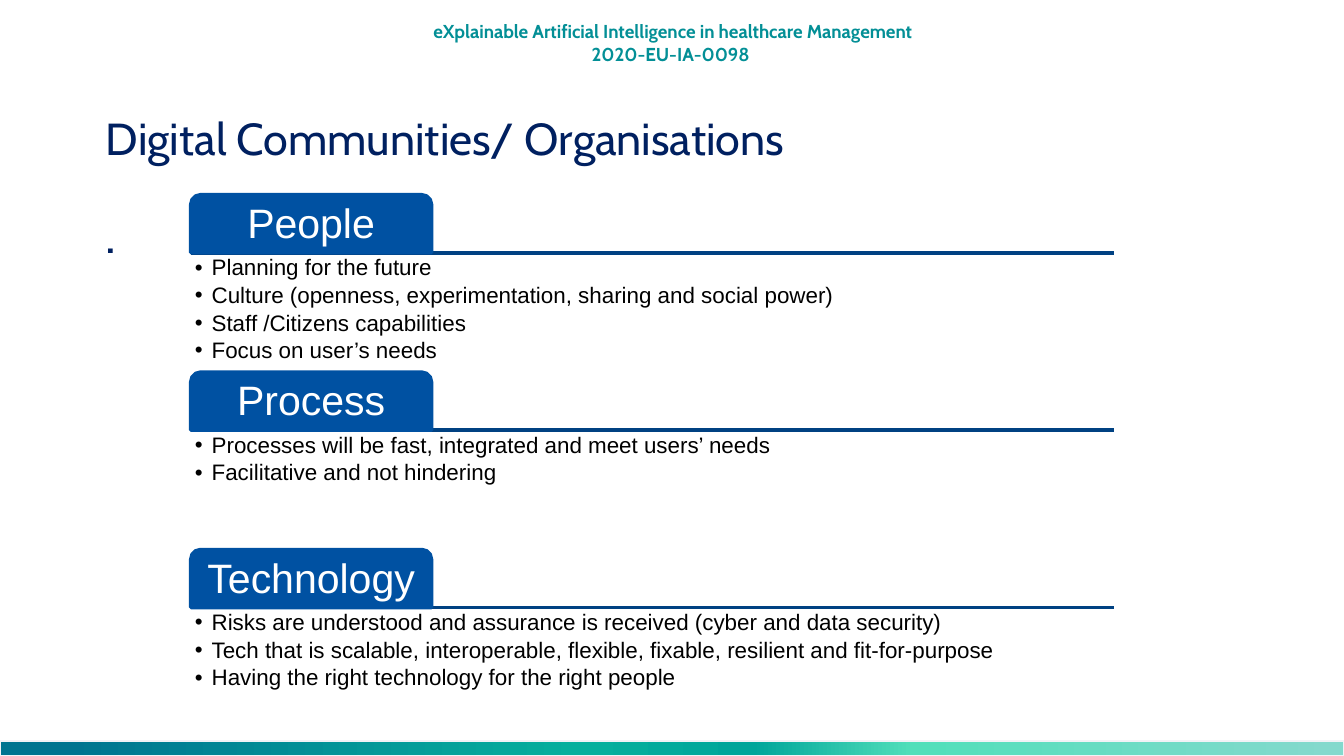
from lxml import etree
from pptx import Presentation
from pptx import util as u
from pptx.dml.color import RGBColor
from pptx.enum import shapes, text
from pptx.oxml import ns

COLORS = {"teal": "038F96", "navy": "002060", "blue": "0051A2", "rule": "004182",
          "white": "FFFFFF", "black": "000000", "edge": "F2F2F6"}
GRADIENT = [(0, "007490"), (5, "007490"), (43, "06AF9D"), (56, "00A59A"),
            (68, "51DFBA"), (99, "84D9CD"), (100, "84D9CD")]
COLS, ROWS = 100, 56.25
LEFT, TAB_W, TAB_H, RULE_W, LIST_H = 14.2, 17.9, 4.3, 68.7, 8.7
FIRST, PITCH = 14.5, 13.2
SECTIONS = {
    "People": ["Planning for the future",
               "Culture (openness, experimentation, sharing and social power)",
               "Staff /Citizens capabilities",
               "Focus on user’s needs"],
    "Process": ["Processes will be fast, integrated and meet users’ needs",
                "Facilitative and not hindering"],
    "Technology": ["Risks are understood and assurance is received (cyber and data security)",
                   "Tech that is scalable, interoperable, flexible, fixable, resilient and fit-for-purpose",
                   "Having the right technology for the right people"],
}


def rgb(name):
    """Return the palette colour of that name."""
    return RGBColor.from_string(COLORS[name])


def add_bullet(p, color):
    """Give a paragraph a hanging round bullet."""
    pPr = p._p.get_or_add_pPr()
    pPr.set("marL", str(u.Pt(9)))
    pPr.set("indent", str(u.Pt(-9)))
    clr = etree.SubElement(pPr, ns.qn("a:buClr"))
    etree.SubElement(clr, ns.qn("a:srgbClr"), val=COLORS[color])
    etree.SubElement(pPr, ns.qn("a:buFont"), typeface="Arial")
    etree.SubElement(pPr, ns.qn("a:buChar"), char="•")


def write(tf, lines, size=12, font="Arial", color="black", bold=False, align="LEFT",
          anchor="TOP", inset=(0.1, 0.05), spacing=0.9, after=0, bullet=False):
    """Fill a text frame with one formatted paragraph per line."""
    tf.word_wrap = True
    tf.vertical_anchor = text.MSO_ANCHOR[anchor]
    tf.margin_left = tf.margin_right = u.Inches(inset[0])
    tf.margin_top = tf.margin_bottom = u.Inches(inset[1])
    for i, line in enumerate(lines):
        p = tf.paragraphs[0] if i == 0 else tf.add_paragraph()
        if bullet:
            add_bullet(p, color)
        p.alignment = text.PP_ALIGN[align]
        if spacing:
            p.line_spacing = spacing
        p.space_after = u.Pt(after)
        r = p.add_run()
        r.text = line
        r.font.size, r.font.name, r.font.bold = u.Pt(size), font, bold
        r.font.color.rgb = rgb(color)


class Deck:
    """Hold the presentation style and the current slide."""

    def __init__(self, width=10):
        """Open a widescreen presentation with one blank slide."""
        self.prs = Presentation()
        self.prs.slide_width, self.prs.slide_height = u.Inches(width), u.Inches(width * 9 / 16)
        self.s = self.prs.slides.add_slide(self.prs.slide_layouts[6])

    def grid(self, *cells):
        """Turn alternating columns and rows into lengths."""
        units = self.prs.slide_width / COLS, self.prs.slide_height / ROWS
        return [round(n * units[i % 2]) for i, n in enumerate(cells)]

    def text(self, cells, lines, **style):
        """Add a text box."""
        sp = self.s.shapes.add_textbox(*self.grid(*cells))
        write(sp.text_frame, lines, **style)
        return sp

    def shape(self, kind, cells, line, weight):
        """Add an outlined preset shape without shadow."""
        sp = self.s.shapes.add_shape(shapes.MSO_SHAPE[kind], *self.grid(*cells))
        sp.shadow.inherit = False
        sp.line.color.rgb, sp.line.width = rgb(line), u.Pt(weight)
        return sp

    def band(self, cells, stops):
        """Add a rectangle with a left-to-right gradient."""
        sp = self.shape("RECTANGLE", cells, "edge", 0.75)
        sp.fill.gradient()
        sp.fill.gradient_angle = 0
        gs_list = sp._element.spPr.find(".//" + ns.qn("a:gsLst"))
        for gs in list(gs_list):
            gs_list.remove(gs)
        for pos, color in stops:
            gs = etree.SubElement(gs_list, ns.qn("a:gs"), pos=str(pos * 1000))
            etree.SubElement(gs, ns.qn("a:srgbClr"), val=color)

    def rule(self, col, row, width):
        """Add a horizontal line."""
        cxn = self.s.shapes.add_connector(shapes.MSO_CONNECTOR.STRAIGHT,
                                          *self.grid(col, row, col + width, row))
        cxn.line.color.rgb, cxn.line.width = rgb("rule"), u.Pt(2)
        etree.SubElement(cxn._element.spPr, ns.qn("a:effectLst"))

    def tab(self, cells, label):
        """Add a round-topped heading tab."""
        sp = self.shape("ROUND_2_SAME_RECTANGLE", cells, "blue", 2)
        sp.fill.solid()
        sp.fill.fore_color.rgb = rgb("blue")
        write(sp.text_frame, [label], size=22, color="white", align="CENTER",
              anchor="MIDDLE", inset=(0.05, 0.05))

    def section(self, row, label, items):
        """Add a rule, its tab and the bullets below."""
        base = row + TAB_H
        self.rule(LEFT, base, RULE_W)
        self.tab((LEFT, row, TAB_W, TAB_H), label)
        self.text((LEFT, base, RULE_W, LIST_H), items, inset=(0.03, 0.03),
                  after=1.8, bullet=True)


def main():
    """Build and save the slide."""
    deck = Deck()
    header = deck.text((31, 1, 38.1, 4.4),
                       ["eXplainable Artificial Intelligence in healthcare Management 2020-EU-IA-0098 "],
                       size=10, font="Cabin", color="teal", bold=True, align="CENTER", spacing=None)
    header.text_frame.auto_size = text.MSO_AUTO_SIZE.SHAPE_TO_FIT_TEXT
    deck.band((0, 55.15, 100, 1.1), GRADIENT)
    deck.text((6.9, 7, 86.2, 6.9), ["Digital Communities/ Organisations"],
              size=24, font="Cabin", color="navy", anchor="MIDDLE")
    deck.text((6.9, 15, 86.2, 35.7), ["."], size=28, font="Cabin", color="navy")
    for i, (label, items) in enumerate(SECTIONS.items()):
        deck.section(FIRST + i * PITCH, label, items)
    deck.prs.save("out.pptx")


if __name__ == "__main__":
    main()
